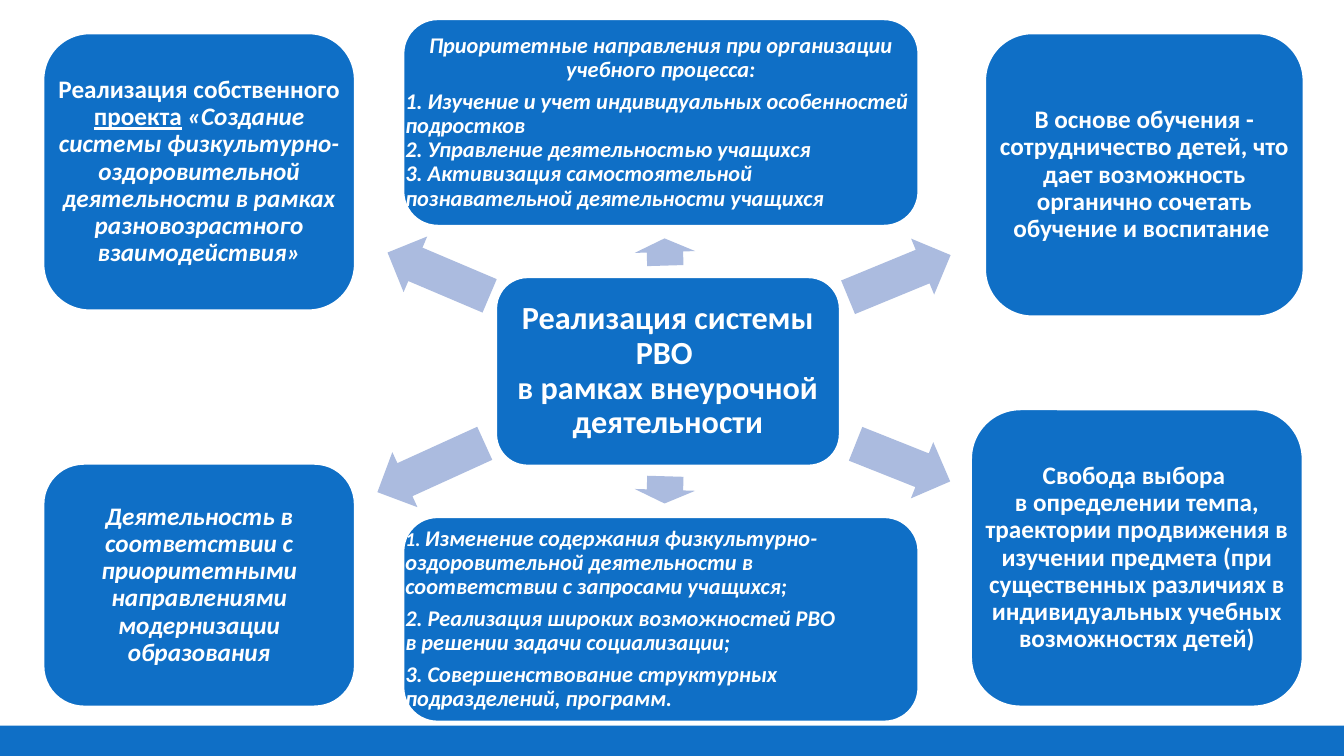
from copy import deepcopy

from pptx import Presentation
from pptx.dml.color import RGBColor
from pptx.enum.shapes import MSO_SHAPE
from pptx.enum.text import MSO_ANCHOR, PP_ALIGN
from pptx.util import Inches, Pt

BLUE = RGBColor(0x0F, 0x6F, 0xC6)
PALE_BLUE = RGBColor(0xAB, 0xBB, 0xDF)
WHITE = RGBColor(0xFF, 0xFF, 0xFF)
CENTER, LEFT = PP_ALIGN.CENTER, PP_ALIGN.LEFT

presentation = Presentation()
presentation.slide_width = Inches(13.33)
presentation.slide_height = Inches(7.5)
slide = presentation.slides.add_slide(presentation.slide_layouts[6])


def add_block(kind, left, top, width, height, color):
    block = slide.shapes.add_shape(
        kind, Inches(left), Inches(top), Inches(width), Inches(height))
    block.shadow.inherit = False
    block.fill.solid()
    block.fill.fore_color.rgb = color
    block.line.fill.background()
    return block


def write(text, *, paragraph, size, italic=False, underline=False):
    for index, line in enumerate(text.split("\n")):
        if index:
            paragraph.add_line_break()
            paragraph._p[-1].append(deepcopy(run._r.rPr))
        run = paragraph.add_run()
        run.text = line
        run.font.name = "Calibri"
        run.font.size = Pt(size)
        run.font.bold = True
        run.font.italic = italic
        run.font.underline = underline
        run.font.color.rgb = WHITE


add_block(MSO_SHAPE.RECTANGLE, 0, 7.2, 13.33, 0.3, BLUE)

arrows = [
    (6.46, 2.2, 0.27, 268.3),
    (8.37, 2.44, 1.1, 337.6),
    (8.45, 4.29, 1.01, 21.7),
    (6.46, 4.56, 0.27, 91.7),
    (3.69, 4.34, 1.17, 155.5),
    (3.8, 2.42, 1.1, 203),
]
for left, top, length, angle in arrows:
    arrow = add_block(MSO_SHAPE.RIGHT_ARROW, left, top, length, 0.6, PALE_BLUE)
    arrow.adjustments[0] = 0.6
    arrow.adjustments[1] = 0.5
    arrow.rotation = angle

upright = {"size": 18}
slanted = {"size": 18, "italic": True}
listed = {"size": 16, "italic": True}

topics = [
    ((4.92, 2.75, 3.41, 1.87), 0.03, [
        (CENTER, [("Реализация системы РВО \nв рамках внеурочной деятельности", {"size": 23})]),
    ]),
    ((4, 0.19, 5.11, 2.05), 0.02, [
        (CENTER, [("Приоритетные направления при организации учебного процесса:", listed)]),
        (LEFT, [("1. Изучение и учет индивидуальных особенностей подростков\n"
                 "2. Управление деятельностью учащихся\n"
                 "3. Активизация самостоятельной познавательной деятельности учащихся", listed)]),
    ]),
    ((9.77, 0.33, 3.16, 2.81), 0.03, [
        (CENTER, [("В основе обучения - сотрудничество детей, что дает возможность "
                   "органично сочетать обучение и воспитание ", upright)]),
    ]),
    ((9.63, 4.06, 3.29, 2.95), 0.03, [
        (CENTER, [("Свобода выбора \nв определении темпа, траектории продвижения в изучении "
                   "предмета (при существенных различиях в индивидуальных учебных "
                   "возможностях детей)", upright)]),
    ]),
    ((4, 5.13, 5.11, 2.03), 0.02, [
        (LEFT, [("1. ", {"size": 14, "italic": True}),
                ("Изменение содержания физкультурно-оздоровительной деятельности в\n"
                 "соответствии с запросами учащихся;", listed)]),
        (LEFT, [("2. Реализация широких возможностей РВО\n"
                 "в решении задачи социализации;", listed)]),
        (LEFT, [("3. Совершенствование структурных\nподразделений, программ.", listed)]),
    ]),
    ((0.43, 4.6, 3.09, 2.41), 0.03, [
        (CENTER, [("Деятельность в соответствии с приоритетными направлениями "
                   "модернизации образования", slanted)]),
    ]),
    ((0.43, 0.33, 3.09, 2.75), 0.03, [
        (CENTER, [("Реализация собственного ", upright),
                  ("проекта", {"size": 18, "underline": True}),
                  (" ", upright),
                  ("«Создание системы физкультурно-оздоровительной деятельности в рамках "
                   "разновозрастного взаимодействия»", slanted)]),
    ]),
]
for bounds, inset, paragraphs in topics:
    card = add_block(MSO_SHAPE.ROUNDED_RECTANGLE, *bounds, BLUE)
    card.line.color.rgb = WHITE
    card.line.width = Pt(1.5)

    frame = slide.shapes.add_textbox(*map(Inches, bounds)).text_frame
    frame.word_wrap = True
    frame.vertical_anchor = MSO_ANCHOR.MIDDLE
    frame.margin_left = frame.margin_right = Inches(inset)
    frame.margin_top = frame.margin_bottom = Inches(inset)
    for index, (alignment, runs) in enumerate(paragraphs):
        paragraph = frame.add_paragraph() if index else frame.paragraphs[0]
        paragraph.alignment = alignment
        paragraph.line_spacing = 0.9
        paragraph.space_after = Pt(0.35 * runs[-1][1]["size"])
        for text, style in runs:
            write(text, paragraph=paragraph, **style)

presentation.save("out.pptx")
